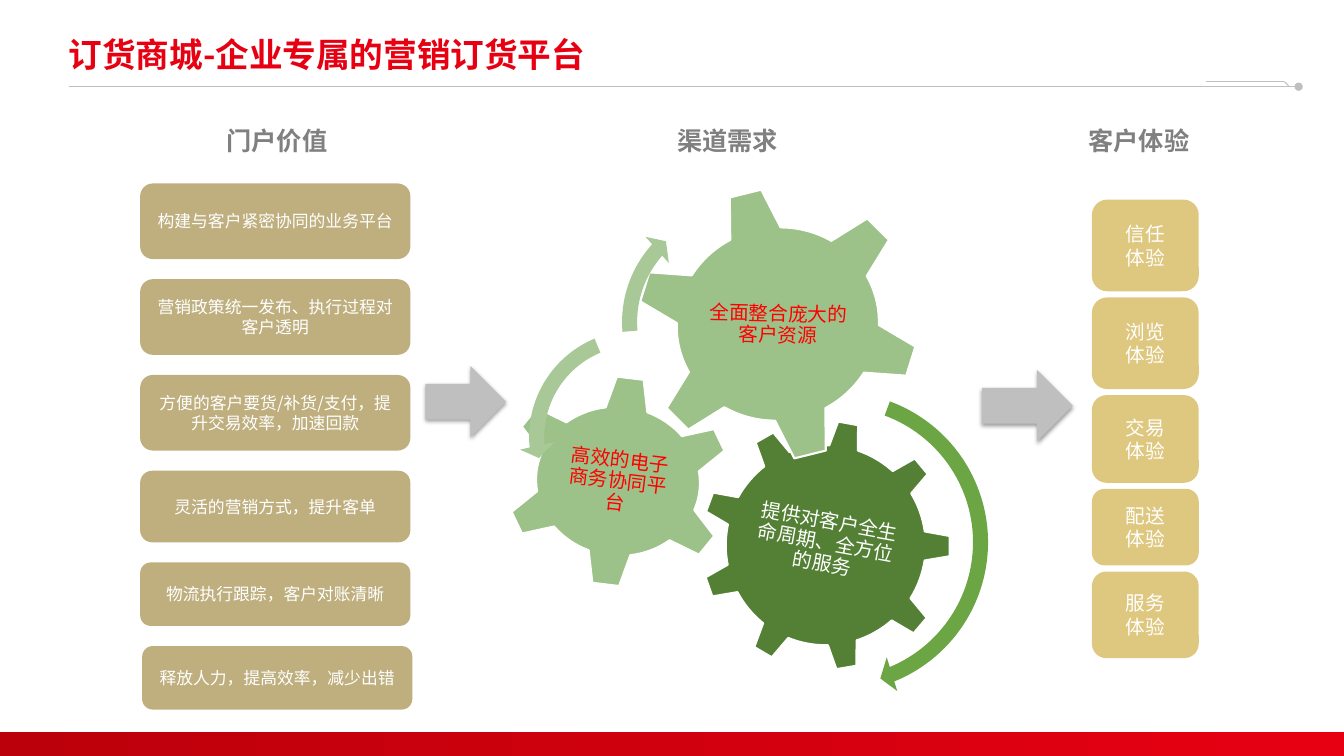
from dataclasses import dataclass

import lxml.etree
import pptx
import pptx.dml.color
import pptx.enum.shapes
import pptx.enum.text
import pptx.oxml
import pptx.oxml.ns
import pptx.util

RGBColor = pptx.dml.color.RGBColor
Preset = pptx.enum.shapes.MSO_SHAPE
Anchor = pptx.enum.text.MSO_ANCHOR
Align = pptx.enum.text.PP_ALIGN
AutoSize = pptx.enum.text.MSO_AUTO_SIZE

EMU_PER_PX = 9144
FONT = "Noto Sans CJK SC"
RED = RGBColor(0xE6, 0x00, 0x12)
DARK_RED = RGBColor(0xBC, 0x00, 0x0B)
TEXT_RED = RGBColor(0xFF, 0x00, 0x00)
WHITE = RGBColor(0xFF, 0xFF, 0xFF)
HEADING_GREY = RGBColor(0x80, 0x80, 0x80)
LIGHT_GREY = RGBColor(0xBF, 0xBF, 0xBF)
BROWN = RGBColor(0x80, 0x60, 0x00)
GOLD = RGBColor(0xBF, 0x90, 0x00)
DARK_GREEN = RGBColor(0x53, 0x80, 0x35)
LIGHT_GREEN = RGBColor(0x9C, 0xC1, 0x89)
SWEEP_GREEN = RGBColor(0x6B, 0xA5, 0x44)
PALE_GREEN = RGBColor(0xA8, 0xC9, 0x97)


@dataclass(frozen=True)
class Box:
    left: int
    top: int
    width: int
    height: int

    def emu(self) -> list[int]:
        return [px(n) for n in (self.left, self.top, self.width, self.height)]


@dataclass(frozen=True)
class Card:
    lines: tuple[str, ...]
    height: int
    shift: int = 0


@dataclass(frozen=True)
class Column:
    cards: tuple[Card, ...]
    left: int
    top: int
    width: int
    gap: int
    fill: RGBColor
    size: int


@dataclass(frozen=True)
class Gear:
    preset: Preset
    box: Box
    rotation: float
    fill: RGBColor
    text: str
    text_box: Box
    text_rotation: float
    text_color: RGBColor


@dataclass(frozen=True)
class Sweep:
    preset: Preset
    box: Box
    rotation: float
    fill: RGBColor
    adjustments: tuple[float, ...]


PORTAL_VALUES = Column((
    Card(("构建与客户紧密协同的业务平台",), 75),
    Card(("营销政策统一发布、执行过程对客户透明",), 75),
    Card(("方便的客户要货/补货/支付，提升交易效率，加速回款",), 75),
    Card(("灵活的营销方式，提升客单",), 71),
    Card(("物流执行跟踪，客户对账清晰",), 63),
    Card(("释放人力，提高效率，减少出错",), 63, shift=2),
), 139, 182, 268, 20, BROWN, 12)

EXPERIENCES = Column((
    Card(("信任", "体验"), 91),
    Card(("浏览", "体验"), 91),
    Card(("交易", "体验"), 87),
    Card(("配送", "体验"), 76),
    Card(("服务", "体验"), 86),
), 1083, 198, 106, 6, GOLD, 14)

HEADINGS = {"门户价值": 214, "渠道需求": 661, "客户体验": 1069}
FLOW_ARROWS = (Box(422, 363, 80, 71), Box(974, 367, 90, 71))
RULES = ((68, 86, 1288, 86), (1196, 81, 1274, 81), (1274, 81, 1278, 85))

GEARS = (
    Gear(Preset.GEAR_9, Box(695, 417, 248, 248), 10.4, DARK_GREEN,
         "提供对客户全生命周期、全方位的服务", Box(745, 475, 148, 128), 10.4, WHITE),
    Gear(Preset.GEAR_6, Box(500, 372, 226, 211), 6.8, LIGHT_GREEN,
         "高效的电子商务协同平台", Box(555, 426, 115, 104), 6.8, TEXT_RED),
    Gear(Preset.GEAR_6, Box(630, 185, 283, 273), 346.1, LIGHT_GREEN,
         "全面整合庞大的客户资源", Box(693, 245, 158, 155), 1.1, TEXT_RED),
)

SWEEPS = (
    Sweep(Preset.CIRCULAR_ARROW, Box(672, 379, 318, 318), 25.8, SWEEP_GREEN,
          (0.047, 2.99, 25.131, 158.679, 0.055)),
    Sweep(Preset.LEFT_CIRCULAR_ARROW, Box(515, 318, 231, 231), 0, PALE_GREEN,
          (0.065, 4.3, 104.891, 148.378, 0.075)),
    Sweep(Preset.CIRCULAR_ARROW, Box(607, 195, 249, 249), 0, PALE_GREEN,
          (0.06, 3.941, 133.138, 105.082, 0.07)),
)


def px(count: int) -> int:
    return count * EMU_PER_PX


def add_element(parent, tag: str, **attributes: str):
    element = lxml.etree.SubElement(parent, pptx.oxml.ns.qn(tag))
    for name, value in attributes.items():
        element.set(name, value)
    return element


def write(paragraph, text: str, size: int, color: RGBColor,
          bold: bool = False, align: Align = Align.CENTER) -> None:
    paragraph.alignment = align
    run = paragraph.add_run()
    run.text = text
    run.font.size = pptx.util.Pt(size)
    run.font.bold = bold
    run.font.color.rgb = color
    run.font.name = FONT
    add_element(run.font._element, "a:ea", typeface=FONT)


def add_solid(slide, preset: Preset, box: Box, fill: RGBColor):
    shape = slide.shapes.add_shape(preset, *box.emu())
    shape.shadow.inherit = False
    shape.fill.solid()
    shape.fill.fore_color.rgb = fill
    shape.line.fill.background()
    return shape


def add_title(slide) -> None:
    title = slide.shapes.title
    title.left, title.top, title.width, title.height = Box(68, 31, 1008, 50).emu()
    frame = title.text_frame
    frame.auto_size = AutoSize.NONE
    frame.vertical_anchor = Anchor.MIDDLE
    frame.margin_left = 0
    frame.paragraphs[0].line_spacing = 0.9
    write(frame.paragraphs[0], "订货商城-企业专属的营销订货平台", 24, RED, True, Align.LEFT)


def add_rule(slide, ends: tuple[int, ...], dotted: bool) -> None:
    rule = slide.shapes.add_connector(
        pptx.enum.shapes.MSO_CONNECTOR.STRAIGHT, *map(px, ends))
    rule.line.color.rgb = LIGHT_GREY
    rule.line.width = pptx.util.Pt(0.75)
    if dotted:
        add_element(rule.line._get_or_add_ln(), "a:tailEnd", type="oval")
    add_element(rule._element.spPr, "a:effectLst")


def add_footer_band(slide) -> None:
    band = add_solid(slide, Preset.RECTANGLE, Box(0, 726, 1333, 24), RED)
    band.fill.gradient()
    band.fill.gradient_angle = 0
    for stop, color in zip(band.fill.gradient_stops, (DARK_RED, RED)):
        stop.color.rgb = color


def add_heading(slide, text: str, left: int) -> None:
    frame = slide.shapes.add_textbox(*Box(left, 119, 121, 40).emu()).text_frame
    frame.word_wrap = False
    frame.auto_size = AutoSize.SHAPE_TO_FIT_TEXT
    write(frame.paragraphs[0], text, 18, HEADING_GREY, True)


def add_flow_arrow(slide, box: Box) -> None:
    arrow = add_solid(slide, Preset.RIGHT_ARROW, box, LIGHT_GREY)
    effects = arrow._element.spPr.find(pptx.oxml.ns.qn("a:effectLst"))
    shadow = add_element(effects, "a:outerShdw", blurRad="39370", dist="20320",
                         dir="5400000", rotWithShape="0")
    add_element(add_element(shadow, "a:srgbClr", val="000000"), "a:alpha", val="38000")


def add_column(slide, column: Column) -> None:
    top = column.top
    for card in column.cards:
        box = Box(column.left + card.shift, top, column.width, card.height)
        shape = add_solid(slide, Preset.ROUNDED_RECTANGLE, box, column.fill)
        color = shape._element.spPr.find(".//" + pptx.oxml.ns.qn("a:srgbClr"))
        add_element(color, "a:alpha", val="50000")
        frame = shape.text_frame
        frame.word_wrap = True
        frame.vertical_anchor = Anchor.MIDDLE
        for index, line in enumerate(card.lines):
            paragraph = frame.add_paragraph() if index else frame.paragraphs[0]
            write(paragraph, line, column.size, WHITE)
        top += card.height + column.gap


def add_gear(slide, gear: Gear) -> None:
    wheel = add_solid(slide, gear.preset, gear.box, gear.fill)
    wheel.rotation = gear.rotation
    wheel.line.color.rgb = WHITE
    wheel.line.width = pptx.util.Pt(1.5)
    label = slide.shapes.add_textbox(*gear.text_box.emu())
    label.rotation = gear.text_rotation
    frame = label.text_frame
    frame.word_wrap = True
    frame.vertical_anchor = Anchor.MIDDLE
    frame.margin_left = frame.margin_right = frame.margin_top = frame.margin_bottom = px(2)
    frame.paragraphs[0].line_spacing = 0.9
    frame.paragraphs[0].space_after = pptx.util.Pt(5)
    write(frame.paragraphs[0], gear.text, 14, gear.text_color)


def add_sweep(slide, sweep: Sweep) -> None:
    arrow = add_solid(slide, sweep.preset, sweep.box, sweep.fill)
    arrow.rotation = sweep.rotation
    for index, value in enumerate(sweep.adjustments):
        arrow.adjustments[index] = value


def main() -> None:
    deck = pptx.Presentation()
    deck.slide_width, deck.slide_height = px(1333), px(750)
    slide = deck.slides.add_slide(deck.slide_layouts.get_by_name("Title Only"))
    for index, ends in enumerate(RULES):
        add_rule(slide, ends, dotted=index == 0)
    add_footer_band(slide)
    add_title(slide)
    for text, left in HEADINGS.items():
        add_heading(slide, text, left)
    for box in FLOW_ARROWS:
        add_flow_arrow(slide, box)
    for gear in GEARS:
        add_gear(slide, gear)
    for sweep in SWEEPS:
        add_sweep(slide, sweep)
    for column in (PORTAL_VALUES, EXPERIENCES):
        add_column(slide, column)
    deck.save("out.pptx")


if __name__ == "__main__":
    main()
